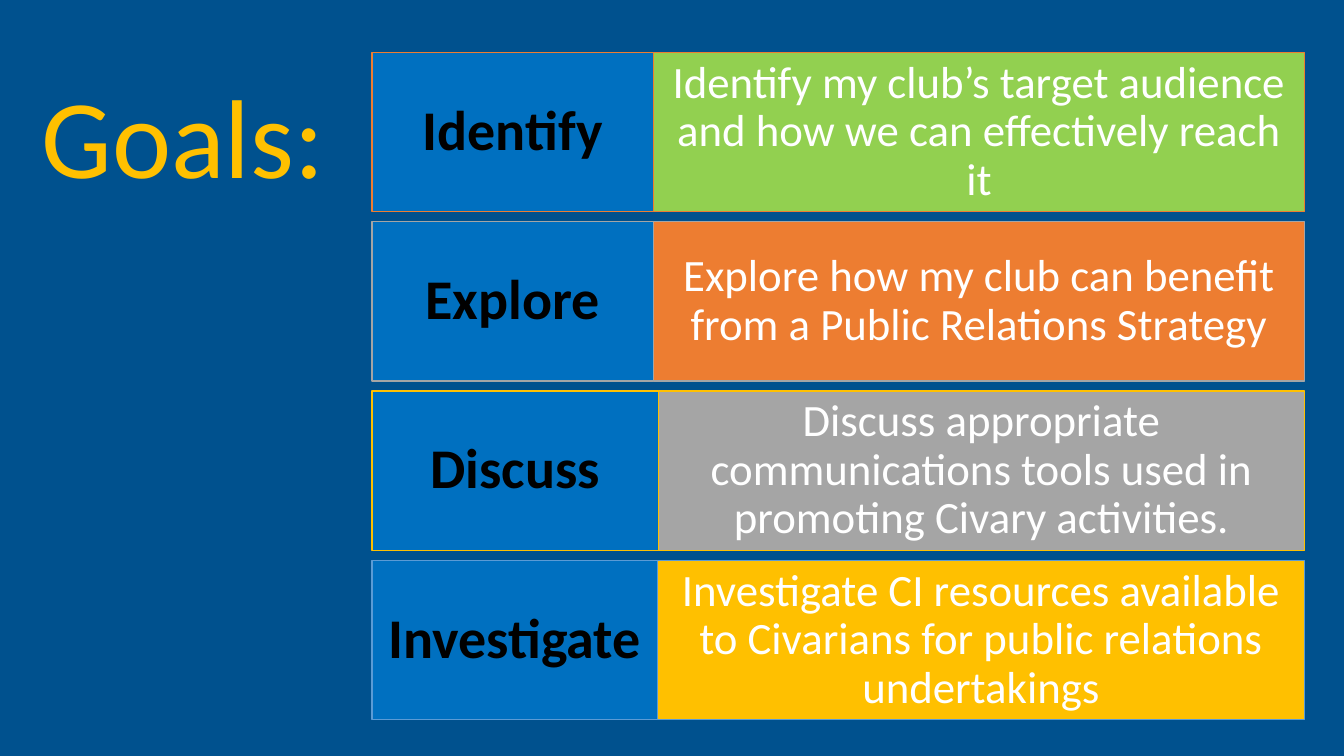
from pptx import Presentation
from pptx.dml.color import RGBColor
from pptx.enum.shapes import MSO_SHAPE
from pptx.enum.text import MSO_ANCHOR, MSO_AUTO_SIZE, PP_ALIGN
from pptx.util import Inches, Pt

RECT = MSO_SHAPE.RECTANGLE
MIDDLE = MSO_ANCHOR.MIDDLE
NO_FIT = MSO_AUTO_SIZE.NONE
CENTER, RIGHT = PP_ALIGN.CENTER, PP_ALIGN.RIGHT

NAVY = RGBColor(0x00, 0x51, 0x8E)
BLUE = RGBColor(0x00, 0x70, 0xC0)
GREEN = RGBColor(0x92, 0xD0, 0x50)
ORANGE = RGBColor(0xED, 0x7D, 0x31)
GRAY = RGBColor(0xA5, 0xA5, 0xA5)
GOLD = RGBColor(0xFF, 0xC0, 0x00)
SKY = RGBColor(0x5B, 0x9B, 0xD5)
BLACK = RGBColor(0x00, 0x00, 0x00)
WHITE = RGBColor(0xFF, 0xFF, 0xFF)

# verb, goal, fill, line, width of the verb cell
GOALS = [
    ("Identify", "Identify my club’s target audience and how we can effectively reach it",
     GREEN, ORANGE, 2.79),
    ("Explore", "Explore how my club can benefit from a Public Relations Strategy",
     ORANGE, GRAY, 2.79),
    ("Discuss", "Discuss appropriate communications tools used in promoting Civary activities.",
     GRAY, GOLD, 2.84),
    ("Investigate", "Investigate CI resources available to Civarians for public relations undertakings",
     GOLD, SKY, 2.83),
]


def write(frame, text, size, color, align, bold=False):
    frame.text = text
    frame.word_wrap = True
    frame.auto_size = NO_FIT
    frame.vertical_anchor = MIDDLE
    par = frame.paragraphs[0]
    par.alignment = align
    par.line_spacing = 0.9
    font = par.font
    font.name, font.size, font.bold = "Calibri", Pt(size), bold
    font.color.rgb = color


def add_cell(slide, box, fill, line, inset):
    cell = slide.shapes.add_shape(RECT, *map(Inches, box))
    cell.shadow.inherit = False
    cell.fill.solid()
    cell.fill.fore_color.rgb = fill
    cell.line.color.rgb = line
    cell.line.width = Pt(1)
    frame = cell.text_frame
    frame.margin_left = frame.margin_right = Inches(inset)
    frame.margin_top = frame.margin_bottom = 0
    return frame


def add_title(slide, box):
    title = slide.shapes.title
    title.left, title.top, title.width, title.height = map(Inches, box)
    write(title.text_frame, "Goals:", 80, GOLD, RIGHT)


def add_goals(slide, box, gap=0.1):
    """Stack one row per goal, a verb cell beside its description."""
    left, top, width, height = box
    step = (height + gap) / len(GOALS)
    for i, (verb, goal, fill, line, split) in enumerate(GOALS):
        y, tall = top + i * step, step - gap
        text = add_cell(slide, (left + split, y, width - split, tall), fill, line, 0.13)
        write(text, goal, 32, WHITE, CENTER)
        head = add_cell(slide, (left, y, split, tall), BLUE, line, 0.09)
        write(head, verb, 40, BLACK, CENTER, bold=True)


def main():
    deck = Presentation()
    deck.slide_width, deck.slide_height = Inches(13.33), Inches(7.5)
    slide = deck.slides.add_slide(deck.slide_layouts[5])
    slide.background.fill.solid()
    slide.background.fill.fore_color.rgb = NAVY
    add_title(slide, (0.21, 0.81, 3.11, 1.2))
    add_goals(slide, (3.69, 0.52, 9.25, 6.62))
    deck.save("out.pptx")


if __name__ == "__main__":
    main()
